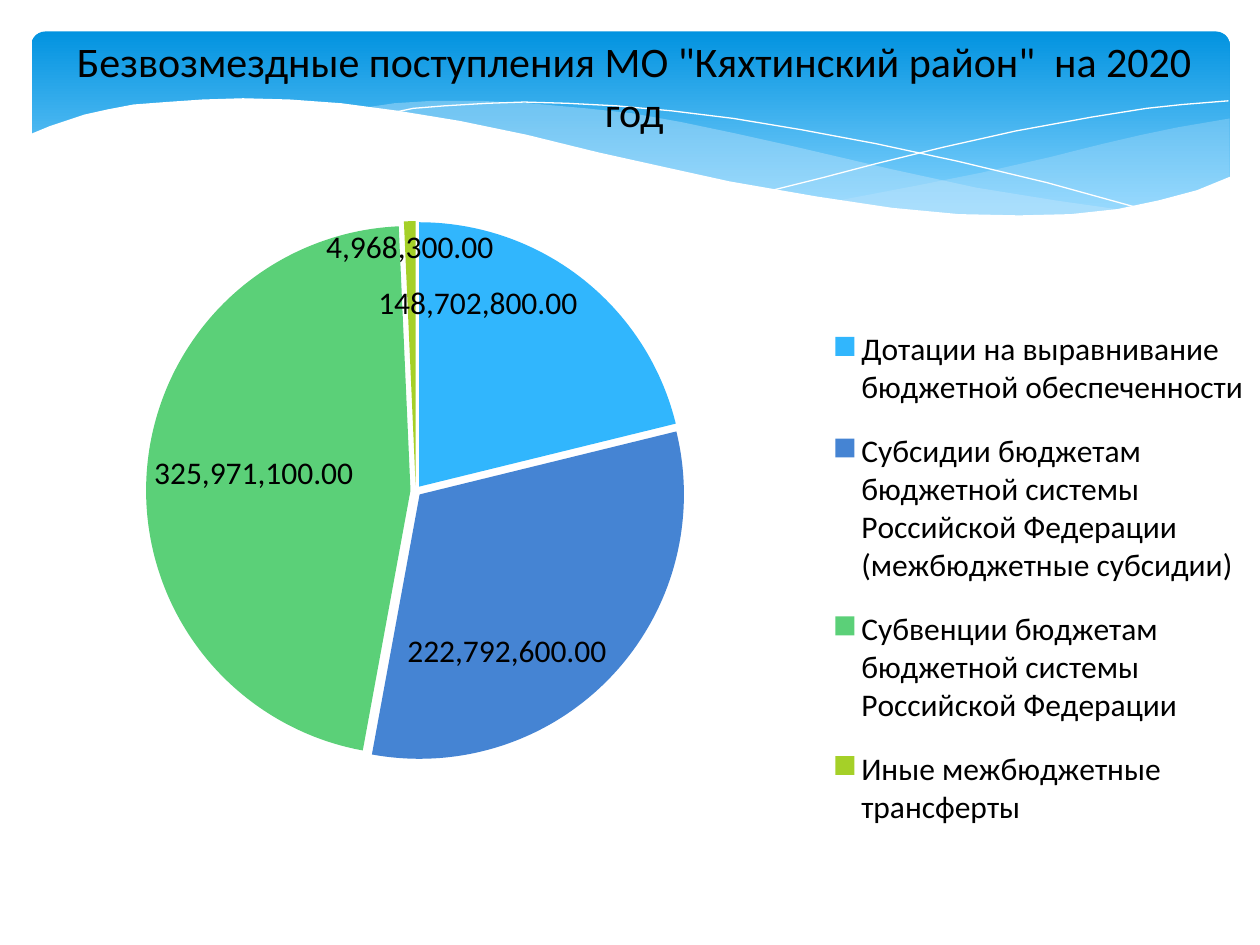
from lxml.etree import SubElement
from pptx import Presentation
from pptx.chart.data import CategoryChartData
from pptx.dml.color import RGBColor
from pptx.enum.chart import XL_CHART_TYPE, XL_LABEL_POSITION, XL_LEGEND_POSITION
from pptx.enum.shapes import MSO_SHAPE
from pptx.enum.text import PP_ALIGN
from pptx.oxml import parse_xml
from pptx.oxml.ns import nsdecls, qn
from pptx.util import Inches, Pt

BLACK = RGBColor(0x00, 0x00, 0x00)
WHITE = RGBColor(0xFF, 0xFF, 0xFF)
BANNER_TOP = RGBColor(0x02, 0x93, 0xE0)
BANNER_BOTTOM = RGBColor(0x83, 0xD3, 0xFE)
PALE_BLUE = RGBColor(0xC6, 0xE7, 0xFC)
SLICE_COLORS = [
    RGBColor(0x31, 0xB6, 0xFD),
    RGBColor(0x45, 0x84, 0xD3),
    RGBColor(0x5B, 0xD0, 0x78),
    RGBColor(0xA5, 0xD0, 0x28),
]
FONT = "Calibri"

RIGHT_WAVE = [
    (976, 94), (935, 101), (906, 107), (876, 114), (832, 125), (779, 137),
    (729, 147), (661, 160), (691, 164), (732, 168), (769, 171), (814, 172),
    (854, 170), (889, 166), (921, 160), (949, 152), (976, 141),
]
MIDDLE_WAVE = [
    (893, 167), (837, 159), (775, 149), (706, 134), (629, 116), (584, 106),
    (541, 97), (502, 90), (465, 86), (420, 82), (380, 80), (344, 80),
    (313, 82), (286, 86), (323, 90), (362, 97), (404, 106), (449, 116),
    (530, 135), (584, 146), (634, 156), (680, 163), (722, 168), (773, 172),
    (818, 173), (857, 171), (893, 167),
]
LONG_CURVE = [
    (309, 90), (328, 86), (353, 84), (387, 82), (416, 81), (450, 82),
    (489, 84), (533, 88), (582, 94), (636, 103), (695, 114), (760, 128),
    (831, 145), (907, 166),
]
SHORT_CURVE = [
    (613, 151), (653, 141), (695, 130), (748, 117), (806, 104), (866, 93),
    (910, 86), (938, 83), (975, 80),
]
WHITE_WAVE = [
    (977, 140), (950, 151), (920, 159), (887, 166), (850, 170), (809, 171),
    (761, 170), (708, 165), (648, 156), (579, 144), (529, 133), (475, 121),
    (418, 107), (365, 96), (316, 88), (271, 82), (230, 79), (193, 78),
    (161, 79), (132, 81), (106, 83), (85, 87), (67, 91), (52, 96),
    (40, 100), (23, 107), (23, 224), (977, 224),
]


def add_wave(slide, points, closed):
    builder = slide.shapes.build_freeform(*points[0], scale=Inches(0.01))
    builder.add_line_segments(points[1:], close=closed)
    wave = builder.convert_to_shape()
    wave.shadow.inherit = False
    return wave


def set_layout(parent, before, target, x, y, width, height):
    inner = '<c:layoutTarget val="inner"/>' if target == "inner" else ""
    layout = parse_xml(
        f'<c:layout {nsdecls("c")}><c:manualLayout>{inner}'
        '<c:xMode val="edge"/><c:yMode val="edge"/>'
        f'<c:x val="{x}"/><c:y val="{y}"/><c:w val="{width}"/><c:h val="{height}"/>'
        "</c:manualLayout></c:layout>"
    )
    for old in parent.findall(qn("c:layout")):
        parent.remove(old)
    parent.find(qn(before)).addprevious(layout)


deck = Presentation()
deck.slide_width = Inches(10)
deck.slide_height = Inches(7.5)
page = deck.slides.add_slide(deck.slide_layouts[6])

banner = page.shapes.add_shape(
    MSO_SHAPE.ROUNDED_RECTANGLE, Inches(0.25), Inches(0.25), Inches(9.51), Inches(1.56)
)
banner.adjustments[0] = 0.07
banner.shadow.inherit = False
banner.line.fill.background()
banner.fill.gradient()
banner.fill.gradient_angle = 270
for stop, position, color in zip(
    banner.fill.gradient_stops, (0, 0.9), (BANNER_TOP, BANNER_BOTTOM)
):
    stop.position = position
    stop.color.rgb = color

for points, color, opacity in (
    (RIGHT_WAVE, PALE_BLUE, 29),
    (MIDDLE_WAVE, PALE_BLUE, 40),
):
    wave = add_wave(page, points, True)
    wave.line.fill.background()
    wave.fill.solid()
    wave.fill.fore_color.rgb = color
    tint = wave.fill._xPr.find(qn("a:solidFill"))[0]
    SubElement(tint, qn("a:alpha")).set("val", str(opacity * 1000))

for points in (LONG_CURVE, SHORT_CURVE):
    curve = add_wave(page, points, False)
    curve.fill.background()
    curve.line.color.rgb = WHITE
    curve.line.width = Pt(0)

white_wave = add_wave(page, WHITE_WAVE, True)
white_wave.fill.solid()
white_wave.fill.fore_color.rgb = WHITE
white_wave.line.fill.background()

title = page.shapes.add_textbox(Inches(0.31), Inches(0.23), Inches(9.45), Inches(0.91))
title.text_frame.word_wrap = True
title.text_frame.text = 'Безвозмездные поступления МО "Кяхтинский район"  на 2020 год'
para = title.text_frame.paragraphs[0]
para.alignment = PP_ALIGN.CENTER
span = para.runs[0]
span.font.name = FONT
span.font.size = Pt(24)
span.font.color.rgb = BLACK

revenue = CategoryChartData(number_format="#,##0.00")
revenue.categories = [
    "Дотации на выравнивание бюджетной обеспеченности",
    "Субсидии бюджетам бюджетной системы Российской Федерации (межбюджетные субсидии)",
    "Субвенции бюджетам бюджетной системы Российской Федерации",
    "Иные межбюджетные трансферты",
]
revenue.add_series("Series 1", (148702800, 222792600, 325971100, 4968300))
chart = page.shapes.add_chart(
    XL_CHART_TYPE.PIE, Inches(0), Inches(1.7), Inches(10), Inches(5.56), revenue
).chart
chart.has_title = False
chart.font.name = FONT
chart.font.size = Pt(18)
chart.font.color.rgb = BLACK

plot = chart.plots[0]
plot.vary_by_categories = True
series = plot.series[0]
for index, color in enumerate(SLICE_COLORS):
    slice_fill = series.points[index].format.fill
    slice_fill.solid()
    slice_fill.fore_color.rgb = color
explosion = parse_xml(f'<c:explosion {nsdecls("c")} val="2"/>')
series._element.find(qn("c:dPt")).addprevious(explosion)

labels = series.data_labels
labels.show_value = True
labels.number_format = "#,##0.00"
labels.number_format_is_linked = False
labels.position = XL_LABEL_POSITION.INSIDE_END

chart.has_legend = True
legend = chart.legend
legend.position = XL_LEGEND_POSITION.RIGHT
legend.include_in_layout = False
set_layout(legend._element, "c:overlay", "outer", 0.65, 0.13, 0.35, 0.78)
plot_area = plot._element.getparent()
set_layout(plot_area, "c:pieChart", "inner", 0.03, 0.01, 0.6, 0.77)

deck.save("out.pptx")
